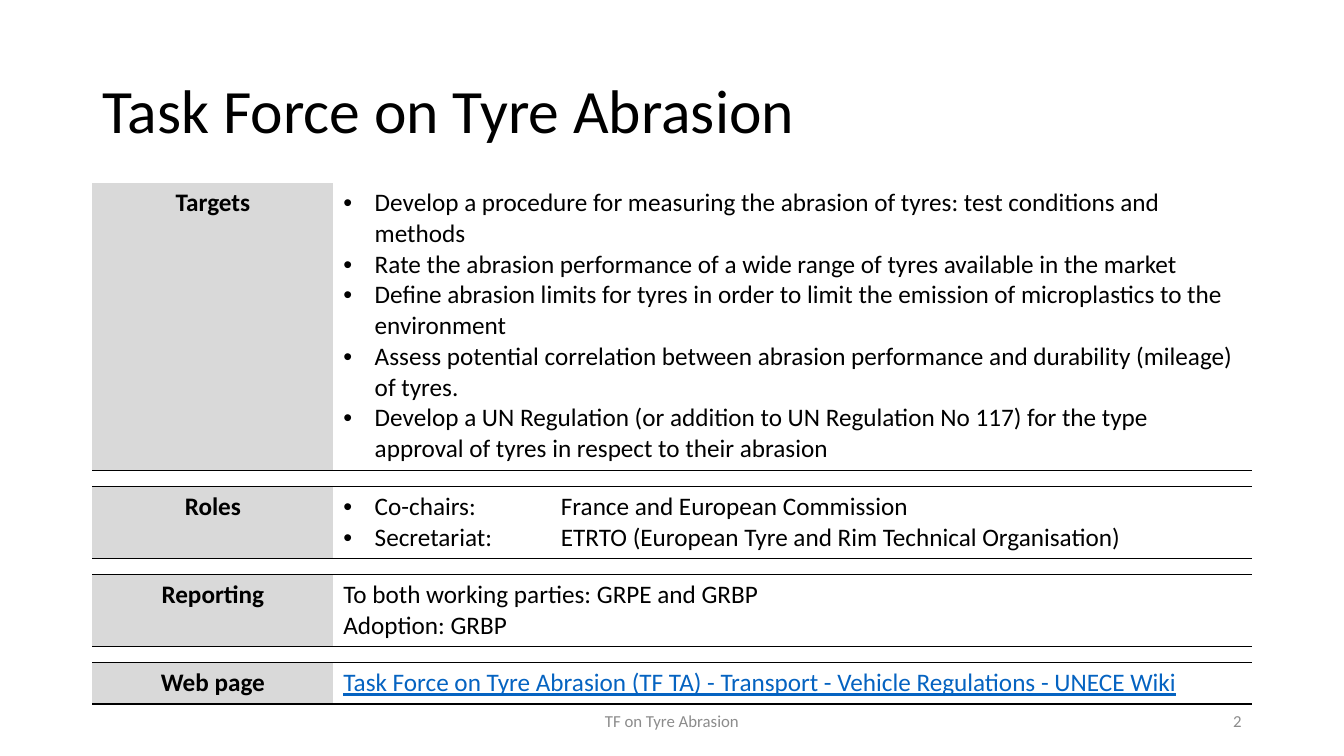
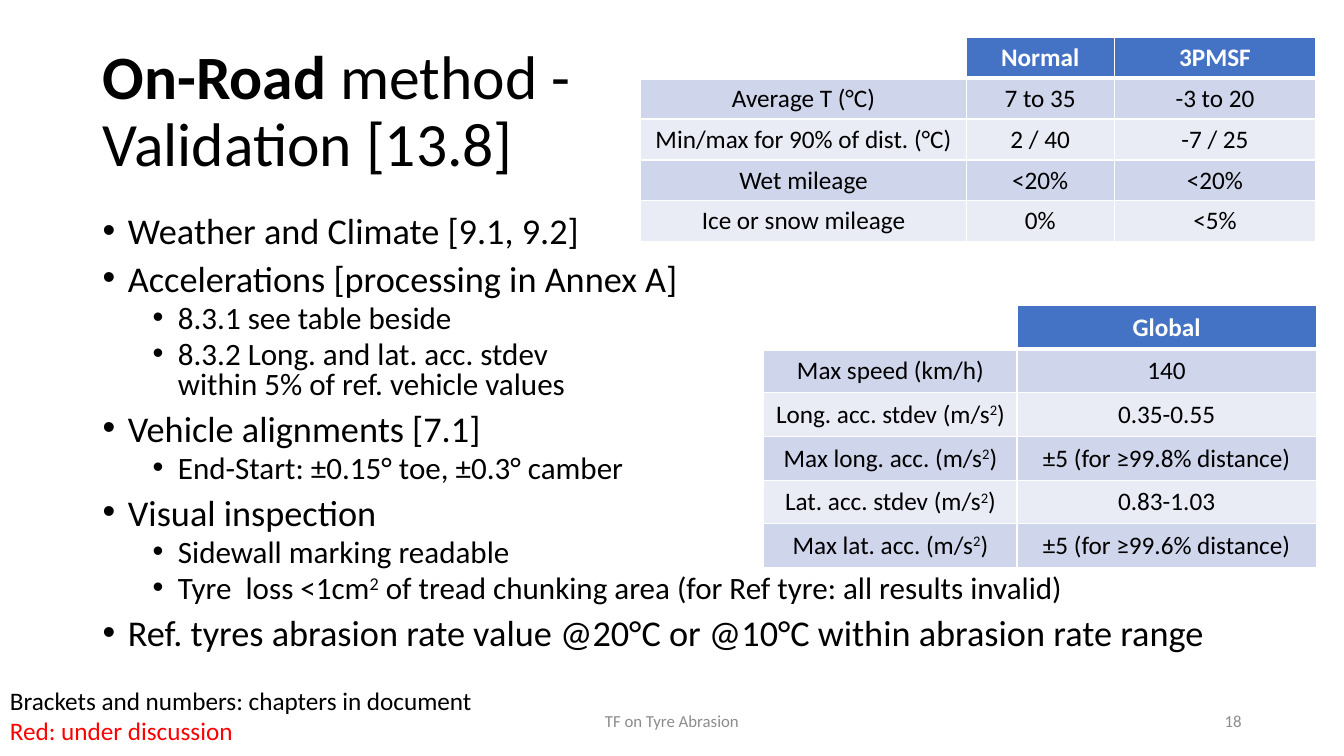
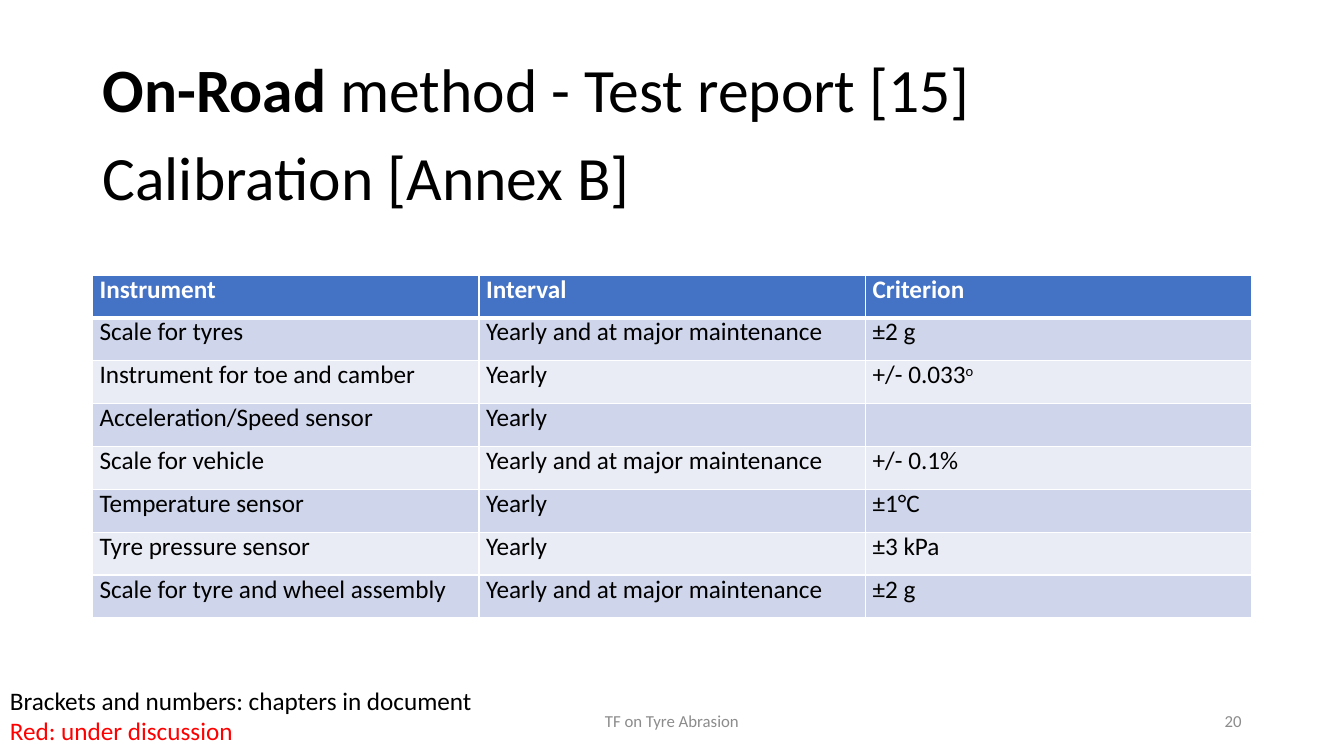
import pptx
import pptx.dml.color
import pptx.enum.text
import pptx.oxml.ns
import pptx.util
from lxml import etree

Cm, Pt = pptx.util.Cm, pptx.util.Pt
Align, Anchor = pptx.enum.text.PP_ALIGN, pptx.enum.text.MSO_ANCHOR

FONT = "Calibri"
BLACK, WHITE, RED, GREY = "000000", "FFFFFF", "FF0000", "8C8C8C"
HEADER, LABEL, LINK = "4472C4", "D9D9D9", "0563C1"
BANDS = ("CFD5EA", "E9EBF5")
NO_GRID_STYLE = "{2D5ABB26-0587-4C30-8999-92F81FD0307C}"
LEFT = 2.33

FOOTER = "TF on Tyre Abrasion"
NOTES = [("Brackets and numbers: chapters in document", BLACK), ("Red: under discussion", RED)]

OVERVIEW = [
    ("Targets", "bullets", 7.25, [
        "Develop a procedure for measuring the abrasion of tyres: test conditions and methods",
        "Rate the abrasion performance of a wide range of tyres available in the market",
        "Define abrasion limits for tyres in order to limit the emission of microplastics to the environment",
        "Assess potential correlation between abrasion performance and durability (mileage) of tyres.",
        "Develop a UN Regulation (or addition to UN Regulation No 117) for the type approval of tyres "
        "in respect to their abrasion",
    ]),
    ("Roles", "bullets", 1.81, [
        "Co-chairs:\tFrance and European Commission",
        "Secretariat:\tETRTO (European Tyre and Rim Technical Organisation)",
    ]),
    ("Reporting", "plain", 1.81, ["To both working parties: GRPE and GRBP", "Adoption: GRBP"]),
    ("Web page", "link", 1.04,
     ["Task Force on Tyre Abrasion (TF TA) - Transport - Vehicle Regulations - UNECE Wiki"]),
]
OVERVIEW_WIDTHS = (6.07, 23.14)
OVERVIEW_GAP = 0.41

VALIDATION = [
    (0, "Weather and Climate [9.1, 9.2]"),
    (0, "Accelerations [processing in Annex A]"),
    (1, "8.3.1 see table beside"),
    (1, "8.3.2 Long. and lat. acc. stdev\nwithin 5% of ref. vehicle values"),
    (0, "Vehicle alignments [7.1]"),
    (1, "End-Start: ±0.15° toe, ±0.3° camber"),
    (0, "Visual inspection"),
    (1, "Sidewall marking readable"),
    (1, "Tyre  loss <1cm^2^ of tread chunking area (for Ref tyre: all results invalid)"),
    (0, "Ref. tyres abrasion rate value @20°C or @10°C within abrasion rate range"),
]
LEVELS = [
    {"size": 25.9, "indent": 0.64, "before": 9.2},
    {"size": 22.2, "indent": 1.9, "before": 4.6},
]

ACCELERATION = [
    (None, "Global"),
    ("Max speed (km/h)", "140"),
    ("Long. acc. stdev (m/s^2^)", "0.35-0.55"),
    ("Max long. acc. (m/s^2^)", "±5 (for ≥99.8% distance)"),
    ("Lat. acc. stdev (m/s^2^)", "0.83-1.03"),
    ("Max lat. acc. (m/s^2^)", "±5 (for ≥99.6% distance)"),
]
CLIMATE = [
    (None, "Normal", "3PMSF"),
    ("Average T (°C)", "7 to 35", "-3 to 20"),
    ("Min/max for 90% of dist. (°C)", "2 / 40", "-7 / 25"),
    ("Wet mileage", "<20%", "<20%"),
    ("Ice or snow mileage", "0%", "<5%"),
]
MAJOR = "Yearly and at major maintenance"
CALIBRATION = [
    ("Instrument", "Interval", "Criterion"),
    ("Scale for tyres", MAJOR, "±2 g"),
    ("Instrument for toe and camber", "Yearly", "+/- 0.033^o^"),
    ("Acceleration/Speed sensor", "Yearly", ""),
    ("Scale for vehicle", MAJOR, "+/- 0.1%"),
    ("Temperature sensor", "Yearly", "±1°C"),
    ("Tyre pressure sensor", "Yearly", "±3 kPa"),
    ("Scale for tyre and wheel assembly", MAJOR, "±2 g"),
]


def rgb(value):
    return pptx.dml.color.RGBColor.from_string(value)


def child(parent, tag, **attributes):
    return etree.SubElement(parent, pptx.oxml.ns.qn(tag), attributes)


def paragraphs(frame, count):
    return [frame.paragraphs[0]] + [frame.add_paragraph() for _ in range(count - 1)]


def style(para, size=18, colour=BLACK, bold=None, align=Align.LEFT):
    para.alignment = align
    para.font.name = FONT
    para.font.size = Pt(size)
    para.font.color.rgb = rgb(colour)
    para.font.bold = bold


def write(para, text):
    for line_index, line in enumerate(text.split("\n")):
        if line_index:
            para.add_line_break()
        for index, part in enumerate(line.split("^")):
            if part:
                span = para.add_run()
                span.text = part
                if index % 2:
                    span._r.get_or_add_rPr().set("baseline", "30000")


def add_bullet(para, indent, hang, tab=None):
    properties = para._p.get_or_add_pPr()
    properties.set("marL", str(Cm(indent)))
    properties.set("indent", str(-Cm(hang)))
    child(properties, "a:buFont", typeface="Arial")
    child(properties, "a:buChar", char="•")
    if tab:
        child(child(properties, "a:tabLst"), "a:tab", pos=str(Cm(tab)), algn="l")


def place(box, left, top, width, height):
    box.left, box.top, box.width, box.height = Cm(left), Cm(top), Cm(width), Cm(height)


def set_title(page, lines, width=29.21, height=3.68):
    title = page.shapes.title
    place(title, LEFT, 1.01, width, height)
    frame = title.text_frame
    frame.auto_size = pptx.enum.text.MSO_AUTO_SIZE.NONE
    frame.vertical_anchor = Anchor.MIDDLE
    for index, (para, (lead, rest)) in enumerate(zip(paragraphs(frame, len(lines)), lines)):
        style(para, 44)
        para.line_spacing = 0.9
        para.space_before = Pt(15 if index else 0)
        for text, bold in ((lead, True), (rest, False)):
            if text:
                span = para.add_run()
                span.text = text
                span.font.bold = bold


def add_text(page, lines, left, top, width, height, size, align=Align.LEFT,
             anchor=Anchor.TOP, wrap=True):
    frame = page.shapes.add_textbox(Cm(left), Cm(top), Cm(width), Cm(height)).text_frame
    frame.word_wrap = wrap
    frame.vertical_anchor = anchor
    for para, (text, colour) in zip(paragraphs(frame, len(lines)), lines):
        style(para, size, colour, align=align)
        write(para, text)


def add_footer(page, number):
    for text, left, width, align in ((FOOTER, 11.22, 11.43, Align.CENTER),
                                     (number, 23.92, 7.62, Align.RIGHT)):
        add_text(page, [(text, GREY)], left, 17.65, width, 1.01, 12, align, Anchor.MIDDLE)


def add_notes(page):
    add_text(page, NOTES, 0, 17.15, 12.3, 1.8, 18, wrap=False)


def set_borders(cell, colour, **widths):
    properties = cell._tc.get_or_add_tcPr()
    for side in "LRTB":
        if side in widths:
            line = child(properties, "a:ln" + side, w=str(Pt(widths[side])))
            child(child(line, "a:solidFill"), "a:srgbClr", val=colour)


def set_fill(cell, colour):
    if colour:
        cell.fill.solid()
        cell.fill.fore_color.rgb = rgb(colour)
    else:
        cell.fill.background()


def set_margins(cell, side, end):
    cell.margin_left = cell.margin_right = Cm(side)
    cell.margin_top = cell.margin_bottom = Cm(end)


def new_table(page, left, top, widths, heights):
    table = page.shapes.add_table(len(heights), len(widths), Cm(left), Cm(top),
                                  Cm(sum(widths)), Cm(sum(heights))).table
    table.first_row = table.horz_banding = False
    table._tbl.tblPr[0].text = NO_GRID_STYLE
    for column, width in zip(table.columns, widths):
        column.width = Cm(width)
    for row, height in zip(table.rows, heights):
        row.height = Cm(height)
    return table


def add_banded_table(page, rows, left, top, widths, row_height, dense=False):
    table = new_table(page, left, top, widths, [row_height] * len(rows))
    for row_index, row in enumerate(rows):
        is_header = row_index == 0
        fill = HEADER if is_header else BANDS[(row_index - 1) % 2]
        for column_index, text in enumerate(row):
            cell = table.cell(row_index, column_index)
            set_borders(cell, WHITE, L=1, R=1, T=3 if row_index == 1 else 1,
                        B=3 if is_header else 1)
            set_fill(cell, None if text is None else fill)
            cell.vertical_anchor = Anchor.MIDDLE
            para = cell.text_frame.paragraphs[0]
            style(para, 18, WHITE if is_header else BLACK, is_header,
                  Align.LEFT if dense else Align.CENTER)
            if dense:
                set_margins(cell, 0.18, 0)
                para.line_spacing = Pt(12)
            write(para, text or "")


def add_overview_table(page):
    heights = []
    for _, _, height, _ in OVERVIEW:
        heights += [height, OVERVIEW_GAP]
    heights.pop()
    table = new_table(page, LEFT, 4.6, OVERVIEW_WIDTHS, heights)
    for row_index in range(len(heights)):
        is_gap = row_index % 2 == 1
        for column_index in range(2):
            cell = table.cell(row_index, column_index)
            set_borders(cell, BLACK, **({"T": 1} if is_gap else {"B": 1}))
            set_fill(cell, LABEL if column_index == 0 and not is_gap else None)
            if is_gap:
                set_margins(cell, 0, 0)
                style(cell.text_frame.paragraphs[0], 6)
    for index, (label, kind, _, lines) in enumerate(OVERVIEW):
        label_cell, text_cell = table.cell(2 * index, 0), table.cell(2 * index, 1)
        heading = label_cell.text_frame.paragraphs[0]
        style(heading, bold=True, align=Align.CENTER)
        write(heading, label)
        for para, line in zip(paragraphs(text_cell.text_frame, len(lines)), lines):
            if kind == "bullets":
                add_bullet(para, 0.79, 0.79, 5.48 if "\t" in line else None)
            style(para, colour=LINK if kind == "link" else BLACK)
            if kind == "link":
                para.font.underline = True
            write(para, line)


def fill_body(page):
    body = page.placeholders[1]
    place(body, LEFT, 5.33, 30.84, 11.61)
    frame = body.text_frame
    frame.auto_size = pptx.enum.text.MSO_AUTO_SIZE.NONE
    for para, (level, text) in zip(paragraphs(frame, len(VALIDATION)), VALIDATION):
        look = LEVELS[level]
        para.level = level
        add_bullet(para, look["indent"], 0.64)
        style(para, look["size"])
        para.line_spacing = 0.8
        para.space_before = Pt(look["before"])
        write(para, text)


def main():
    deck = pptx.Presentation()
    deck.slide_width, deck.slide_height = Cm(33.87), Cm(19.05)
    title_and_body, title_only = deck.slide_layouts[1], deck.slide_layouts[5]

    page = deck.slides.add_slide(title_only)
    set_title(page, [("", "Task Force on Tyre Abrasion")])
    add_overview_table(page)
    add_footer(page, "2")

    page = deck.slides.add_slide(title_and_body)
    set_title(page, [("On-Road", " method - Validation [13.8]")], width=13.18)
    fill_body(page)
    add_banded_table(page, ACCELERATION, 19.25, 7.7, (6.38, 7.54), 1.1)
    add_banded_table(page, CLIMATE, 16.15, 0.94, (8.2, 3.73, 5.08), 1.03)
    add_footer(page, "18")
    add_notes(page)

    page = deck.slides.add_slide(title_only)
    set_title(page, [("On-Road", " method - Test report [15]"), ("", "Calibration [Annex B]")],
              height=4.85)
    add_banded_table(page, CALIBRATION, LEFT, 6.93, (9.74,) * 3, 1.08, dense=True)
    add_footer(page, "20")
    add_notes(page)

    deck.save("out.pptx")


if __name__ == "__main__":
    main()
